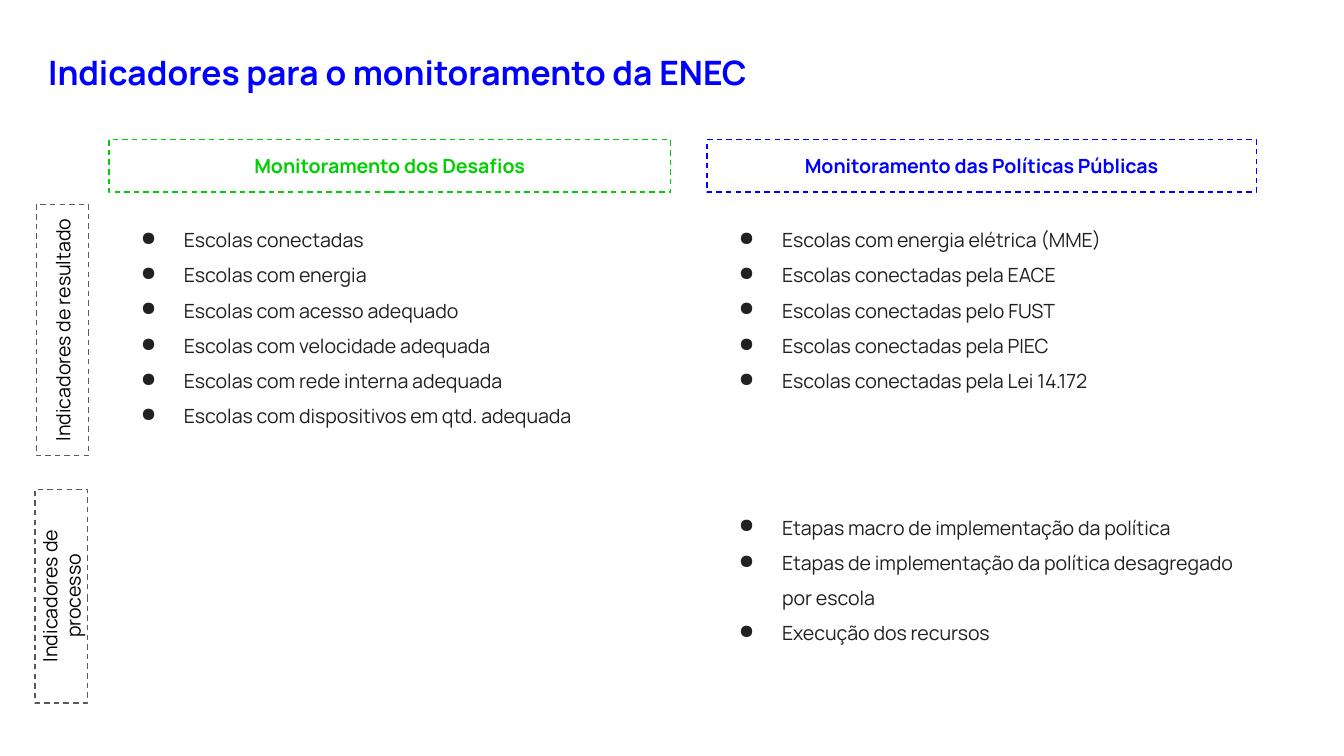
from lxml import etree
from pptx import Presentation, util as u
from pptx.dml.color import RGBColor
from pptx.enum import dml, shapes, text
from pptx.oxml import ns

BLUE = RGBColor(0x00, 0x00, 0xFF)
GREEN = RGBColor(0x00, 0xCF, 0x00)
GREY = RGBColor(0x59, 0x59, 0x59)
BLACK = RGBColor(0x00, 0x00, 0x00)
INK = RGBColor(0x21, 0x21, 0x21)

# Grid in inches: (start, extent)
COLUMNS = [(0.81, 4.18), (5.26, 4.09)]
ROWS = [(1.52, 1.87), (3.64, 1.59)]
LIST_TOPS = [1.51, 3.65]
BAND = 0.39  # thickness of every heading box
HEADER_TOP = 1.04
LIST_SHIFT = -0.04  # lists start just left of their column

# Widescreen 16:9 page
deck = Presentation()
deck.slide_width = u.Inches(10)
deck.slide_height = deck.slide_width * 9 // 16
page = deck.slides.add_slide(deck.slide_layouts[6])


def write(box, lines, size, color, bold=False, align=text.PP_ALIGN.LEFT):
    frame = box.text_frame
    frame.word_wrap = True
    frame.margin_left = frame.margin_right = u.Inches(0.1)
    frame.margin_top = frame.margin_bottom = u.Inches(0.1)
    for index, line in enumerate(lines):
        para = frame.add_paragraph() if index else frame.paragraphs[0]
        para.alignment = align
        span = para.add_run()
        span.text = line
        span.font.name = "Manrope"
        span.font.size = u.Pt(size)
        span.font.bold = bold
        span.font.color.rgb = color
    return frame


def add_heading(label, center_x, center_y, length, line_color, color, bold, angle):
    box = page.shapes.add_shape(
        shapes.MSO_SHAPE.RECTANGLE,
        u.Inches(center_x - length / 2), u.Inches(center_y - BAND / 2),
        u.Inches(length), u.Inches(BAND))
    box.rotation = angle
    box.shadow.inherit = False
    box.fill.background()
    box.line.color.rgb = line_color
    box.line.width = u.Pt(0.75)
    box.line.dash_style = dml.MSO_LINE.DASH
    frame = write(box, [label], 10.5, color, bold, text.PP_ALIGN.CENTER)
    frame.vertical_anchor = text.MSO_ANCHOR.MIDDLE


# Title
title = page.shapes.add_textbox(u.Inches(0.26), u.Inches(0.29), u.Inches(6.25), u.Inches(0.5))
frame = write(title, ["Indicadores para o monitoramento da ENEC"], 18, BLUE, True)
frame.auto_size = text.MSO_AUTO_SIZE.SHAPE_TO_FIT_TEXT

# Column headings
column_labels = [("Monitoramento dos Desafios", GREEN),
                 ("Monitoramento das Políticas Públicas", BLUE)]
for (label, color), (left, width) in zip(column_labels, COLUMNS):
    add_heading(label, left + width / 2, HEADER_TOP + BAND / 2, width, color, color, True, 0)

# Row headings, turned to read upwards
row_labels = [("Indicadores de resultado", 0.27), ("Indicadores de processo", 0.26)]
for (label, left), (top, height) in zip(row_labels, ROWS):
    add_heading(label, left + BAND / 2, top + height / 2, height, GREY, BLACK, False, 270)

# Bulleted lists: column, row, height, items
lists = [
    (0, 0, 1.79, ["Escolas conectadas",
                  "Escolas com energia",
                  "Escolas com acesso adequado",
                  "Escolas com velocidade adequada",
                  "Escolas com rede interna adequada",
                  "Escolas com dispositivos em qtd. adequada"]),
    (1, 0, 1.79, ["Escolas com energia elétrica (MME)",
                  "Escolas conectadas pela EACE",
                  "Escolas conectadas pelo FUST",
                  "Escolas conectadas pela PIEC",
                  "Escolas conectadas pela Lei 14.172"]),
    (1, 1, 1.27, ["Etapas macro de implementação da política",
                  "Etapas de implementação da política desagregado por escola",
                  "Execução dos recursos"]),
]
for column, row, height, items in lists:
    left, width = COLUMNS[column]
    box = page.shapes.add_textbox(u.Inches(left + LIST_SHIFT), u.Inches(LIST_TOPS[row]),
                                  u.Inches(width), u.Inches(height))
    frame = write(box, items, 10.5, INK)
    frame.auto_size = text.MSO_AUTO_SIZE.SHAPE_TO_FIT_TEXT
    for para in frame.paragraphs:
        para.line_spacing = 1.5
        props = para._p.get_or_add_pPr()
        props.set("marL", str(u.Inches(0.5)))
        props.set("indent", str(u.Inches(-0.32)))
        bullet_color = etree.SubElement(props, ns.qn("a:buClr"))
        etree.SubElement(bullet_color, ns.qn("a:srgbClr"), val=str(INK))
        etree.SubElement(props, ns.qn("a:buChar"), char="●")

deck.save("out.pptx")
